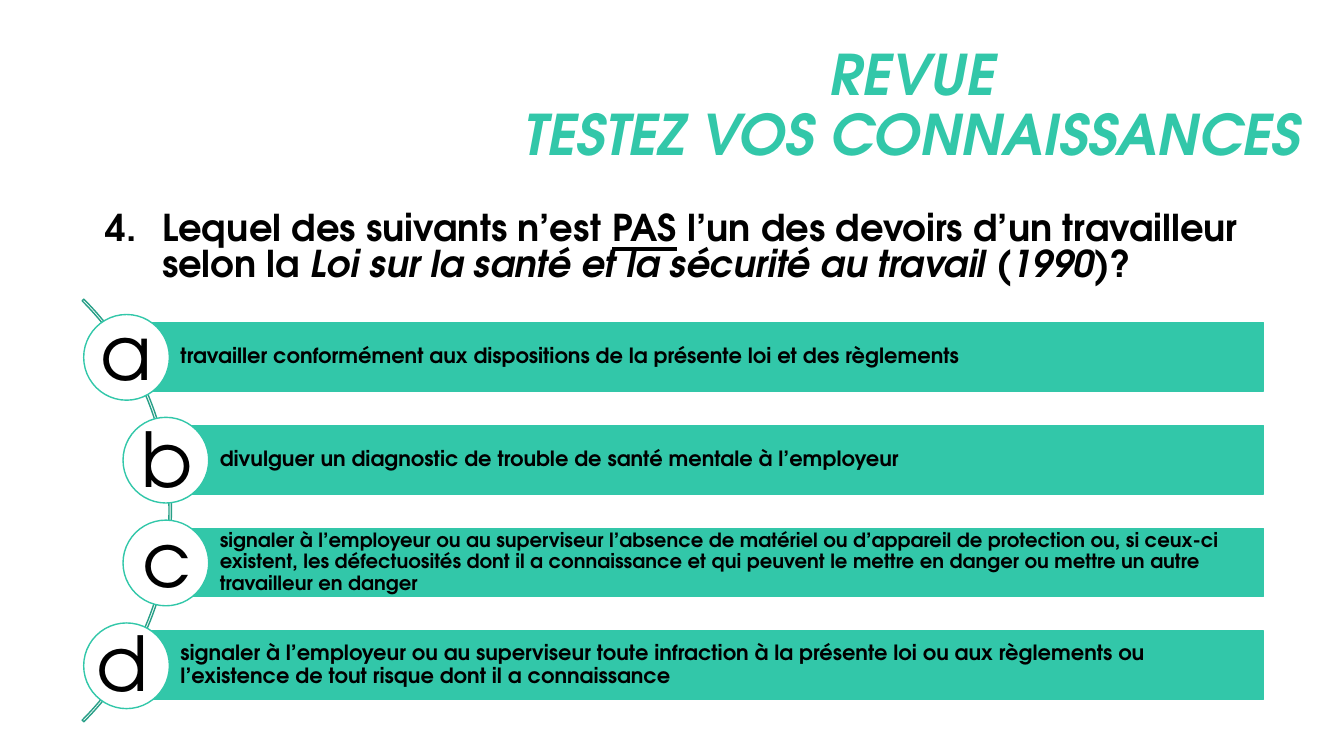
import pptx
import pptx.dml.color
import pptx.enum.shapes
import pptx.enum.text
import pptx.oxml
import pptx.oxml.ns
import pptx.util

PX = 9144  # 100 px to the inch
FONT = "TeX Gyre Adventor"
COLOURS = {"teal": "32C7A9", "arc": "289F87", "text": "000000", "white": "FFFFFF"}
SHAPES = pptx.enum.shapes.MSO_SHAPE
ALIGN = pptx.enum.text.PP_ALIGN
ANCHOR = pptx.enum.text.MSO_ANCHOR

QUESTION = [
    ("Lequel des suivants n’est ", {}),
    ("PAS", {"underline": True}),
    (" l’un des devoirs d’un travailleur selon la ", {}),
    ("Loi sur la santé et la sécurité au travail (1990)", {"italic": True}),
    ("?", {}),
]
# letter, letter left and top, bar left, text size, answer
ANSWERS = [
    ("a", 89, 298, 125, 15,
     "travailler conformément aux dispositions de la présente loi et des règlements"),
    ("b", 130, 404, 164, 15,
     "divulguer un diagnostic de trouble de santé mentale à l’employeur"),
    ("c", 130, 503, 164, 14,
     "signaler à l’employeur ou au superviseur l’absence de matériel ou d’appareil "
     "de protection ou, si ceux-ci existent, les défectuosités dont il a connaissance "
     "et qui peuvent le mettre en danger ou mettre un autre travailleur en danger"),
    ("d", 85, 606, 125, 15,
     "signaler à l’employeur ou au superviseur toute infraction à la présente loi ou "
     "aux règlements ou l’existence de tout risque dont il a connaissance"),
]
BAR_TOP, BAR_PITCH, BAR_HEIGHT, BAR_RIGHT = 320, 102, 68, 1253
CIRCLE = 85


def rgb(colour):
    return pptx.dml.color.RGBColor.from_string(COLOURS[colour])


class QuizSlide:
    def __init__(self, presentation):
        self.slide = presentation.slides.add_slide(presentation.slide_layouts[5])

    def box(self, *lengths):
        return [length * PX for length in lengths]

    def run(self, paragraph, text, size, colour="text", bold=False, italic=False,
            underline=False):
        run = paragraph.add_run()
        run.text = text
        font = run.font
        font.name, font.size = FONT, pptx.util.Pt(size)
        font.bold, font.italic, font.underline = bold, italic, underline
        font.color.rgb = rgb(colour)

    def title(self, lines, left, top, width, height):
        title = self.slide.shapes.title
        title.left, title.top, title.width, title.height = self.box(
            left, top, width, height)
        frame = title.text_frame
        frame.word_wrap = True
        frame.auto_size = pptx.enum.text.MSO_AUTO_SIZE.NONE
        frame.vertical_anchor = ANCHOR.MIDDLE
        paragraph = frame.paragraphs[0]
        paragraph.alignment = ALIGN.CENTER
        paragraph.line_spacing = 0.9
        for number, line in enumerate(lines):
            if number:
                paragraph.add_line_break()
            self.run(paragraph, line, 40, "teal", bold=True, italic=True)

    def text_box(self, left, top, width, height, wrap=True):
        frame = self.slide.shapes.add_textbox(
            *self.box(left, top, width, height)).text_frame
        frame.word_wrap = wrap
        return frame.paragraphs[0]

    def question(self, runs, number, left, top, width, height):
        paragraph = self.text_box(left, top, width, height)
        paragraph.line_spacing = 0.8
        properties = paragraph._p.get_or_add_pPr()
        properties.set("marL", str(56 * PX))
        properties.set("indent", str(-56 * PX))
        numbering = pptx.oxml.parse_xml(
            f'<a:buAutoNum {pptx.oxml.ns.nsdecls("a")} '
            f'type="arabicPeriod" startAt="{number}"/>')
        properties.append(numbering)
        for text, emphasis in runs:
            self.run(paragraph, text, 26.4, bold=True, **emphasis)

    def shape(self, kind, left, top, width, height, fill=None, line="teal"):
        shape = self.slide.shapes.add_shape(kind, *self.box(left, top, width, height))
        shape.shadow.inherit = False
        if fill:
            shape.fill.solid()
            shape.fill.fore_color.rgb = rgb(fill)
        else:
            shape.fill.background()
        shape.line.color.rgb = rgb(line)
        shape.line.width = pptx.util.Pt(1)
        return shape

    def arc(self, left, top, size):
        """Thin arc from 315 to 45 degrees, behind the answers."""
        arc = self.shape(SHAPES.BLOCK_ARC, left, top, size, size, line="arc")
        for index, value in enumerate((189, 27, 0.004)):
            arc.adjustments[index] = value

    def bar(self, text, size, left, top):
        bar = self.shape(SHAPES.RECTANGLE, left, top, BAR_RIGHT - left, BAR_HEIGHT,
                         fill="teal")
        frame = bar.text_frame
        frame.word_wrap = True
        frame.vertical_anchor = ANCHOR.MIDDLE
        (frame.margin_left, frame.margin_top,
         frame.margin_right, frame.margin_bottom) = self.box(54, 4, 4, 4)
        paragraph = frame.paragraphs[0]
        paragraph.alignment = ALIGN.LEFT
        paragraph.line_spacing = 0.9
        self.run(paragraph, text, size, bold=True)

    def letter(self, text, left, top):
        paragraph = self.text_box(left, top, 72, 101, wrap=False)
        paragraph.alignment = ALIGN.CENTER
        self.run(paragraph, text, 54)


def main():
    presentation = pptx.Presentation()
    presentation.slide_width = 1333 * PX
    presentation.slide_height = 750 * PX
    quiz = QuizSlide(presentation)
    quiz.title(["REVUE", "TESTEZ VOS CONNAISSANCES"], 382, 36, 1046, 141)
    quiz.question(QUESTION, 4, 95, 207, 1163, 97)
    quiz.arc(-423, 210, 593)
    for row, (letter, letter_left, letter_top, left, size, text) in enumerate(ANSWERS):
        top = BAR_TOP + row * BAR_PITCH
        quiz.bar(text, size, left, top)
        quiz.shape(SHAPES.OVAL, left - CIRCLE // 2, top - (CIRCLE - BAR_HEIGHT) // 2,
                   CIRCLE, CIRCLE, fill="white")
        quiz.letter(letter, letter_left, letter_top)
    presentation.save("out.pptx")


if __name__ == "__main__":
    main()
